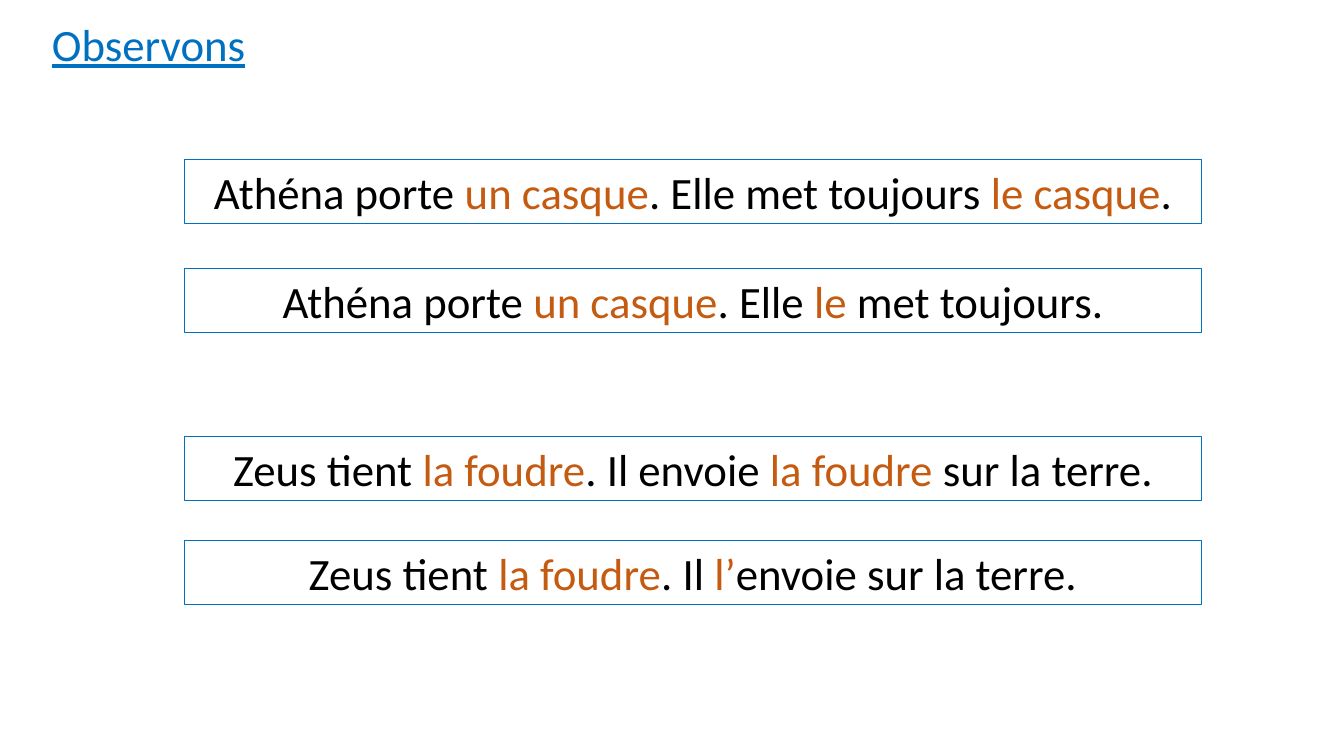
from dataclasses import dataclass

from pptx import Presentation
from pptx import util as u
from pptx.dml.color import RGBColor
from pptx.enum import shapes, text


@dataclass(frozen=True)
class Theme:
    font: str = "Calibri"
    size: int = 32
    blue: RGBColor = RGBColor(0x00, 0x70, 0xC0)
    ink: RGBColor = RGBColor(0x00, 0x00, 0x00)
    accent: RGBColor = RGBColor(0xC5, 0x5A, 0x11)
    border: float = 0.75


def px(length):
    return u.Emu(length * 9525)


class Lesson:
    def __init__(self, slide, theme):
        self.slide = slide
        self.theme = theme

    def style_text(self, frame, align):
        frame.word_wrap = True
        frame.auto_size = text.MSO_AUTO_SIZE.SHAPE_TO_FIT_TEXT
        frame.vertical_anchor = text.MSO_ANCHOR.TOP
        line = frame.paragraphs[0]
        line.alignment = align
        line.font.name = self.theme.font
        line.font.size = u.Pt(self.theme.size)
        return line

    def heading(self, wording, left, top, width, height):
        box = self.slide.shapes.add_textbox(*map(px, (left, top, width, height)))
        line = self.style_text(box.text_frame, text.PP_ALIGN.LEFT)
        line.add_run().text = wording
        line.font.color.rgb = self.theme.blue
        line.font.underline = True

    def sentence(self, pieces, left, top, width, height):
        frame = self.slide.shapes.add_shape(
            shapes.MSO_SHAPE.RECTANGLE, *map(px, (left, top, width, height)))
        frame.shadow.inherit = False
        frame.fill.background()
        frame.line.color.rgb = self.theme.blue
        frame.line.width = u.Pt(self.theme.border)
        line = self.style_text(frame.text_frame, text.PP_ALIGN.CENTER)
        for position, piece in enumerate(pieces):
            run = line.add_run()
            run.text = piece
            run.font.color.rgb = self.theme.accent if position % 2 else self.theme.ink


SENTENCES = [
    (152, ["Athéna porte ", "un casque", ". Elle met toujours ", "le casque", "."]),
    (256, ["Athéna porte ", "un casque", ". Elle ", "le", " met toujours."]),
    (416, ["Zeus tient ", "la foudre", ". Il envoie ", "la foudre ", "sur la terre."]),
    (515, ["Zeus tient ", "la foudre", ". Il ", "l’", "envoie sur la terre."]),
]


def main():
    deck = Presentation()
    deck.slide_width, deck.slide_height = px(1280), px(720)
    lesson = Lesson(deck.slides.add_slide(deck.slide_layouts[6]), Theme())
    lesson.heading("Observons", 40, 11, 560, 61)
    for top, pieces in SENTENCES:
        lesson.sentence(pieces, 176, top, 968, 61)
    deck.save("out.pptx")


if __name__ == "__main__":
    main()
